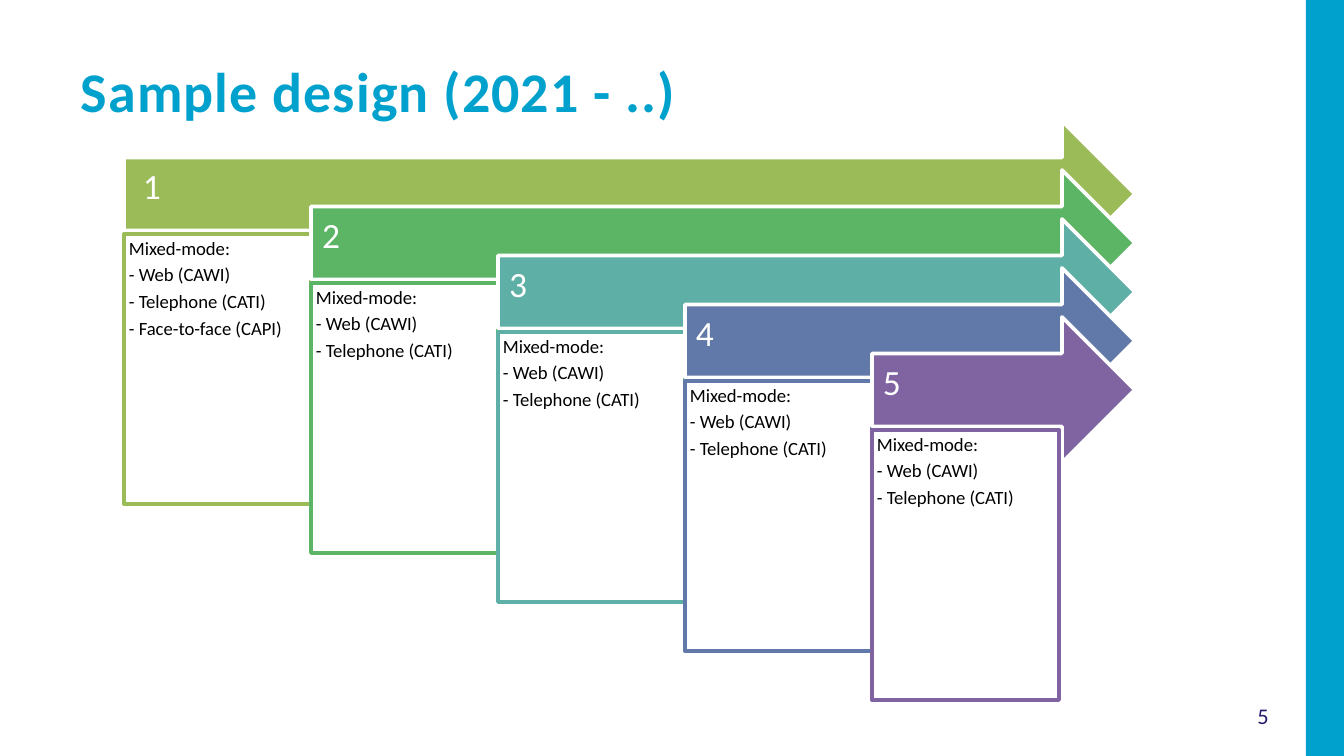
"""Builds a slide with five staggered survey waves and their interview modes."""
import pptx
import pptx.util
from pptx.dml.color import RGBColor
from pptx.enum.shapes import MSO_SHAPE
from pptx.enum.text import MSO_ANCHOR, PP_ALIGN

TITLE = "Sample design (2021 - ..)"
PAGE_NUMBER = "5"
MODES = ["Mixed-mode:", "- Web (CAWI)", "- Telephone (CATI)"]
WAVES = [
    ("1", "lime", MODES + ["- Face-to-face (CAPI)"], 19),
    ("2", "green", MODES, 11),
    ("3", "teal", MODES, 11),
    ("4", "blue", MODES, 11),
    ("5", "purple", MODES, 11),
]
COLOURS = {
    "white": "FFFFFF", "black": "000000", "cyan": "00A1CD", "navy": "271D6C",
    "lime": "9BBB59", "green": "5CB565", "teal": "5EAFA6",
    "blue": "6179A8", "purple": "8064A2",
}
FONT = "Calibri"
EMU_PER_PX = 914400 / 134.4
WIDTH, HEIGHT = 1344, 756
LEFT, ARROW_TOP, ARROW_RIGHT, ARROW_HEIGHT = 124, 121, 1135, 146
CARD_TOP, CARD_WIDTH, CARD_HEIGHT = 234, 187, 270
STEP_DOWN = 49


def px(length):
    return pptx.util.Emu(round(length * EMU_PER_PX))


def colour(name):
    return RGBColor.from_string(COLOURS[name])


def add_block(page, kind, place, fill, line=None):
    block = page.shapes.add_shape(kind, *map(px, place))
    block.shadow.inherit = False
    block.fill.solid()
    block.fill.fore_color.rgb = colour(fill)
    if line:
        block.line.color.rgb = colour(line)
        block.line.width = pptx.util.Pt(2)
    else:
        block.line.fill.background()
    return block


def write(shape, lines, size, ink, insets, anchor=MSO_ANCHOR.TOP,
          align=PP_ALIGN.LEFT, spacing=1.0, after=0, bold=False, tracking=0):
    frame = shape.text_frame
    frame.word_wrap = True
    frame.vertical_anchor = anchor
    (frame.margin_left, frame.margin_top,
     frame.margin_right, frame.margin_bottom) = map(px, insets)
    for index, line in enumerate(lines):
        para = frame.add_paragraph() if index else frame.paragraphs[0]
        para.alignment = align
        para.line_spacing = spacing
        para.space_after = pptx.util.Pt(after)
        span = para.add_run()
        span.text = line
        span.font.name = FONT
        span.font.size = pptx.util.Pt(size)
        span.font.bold = bold
        span.font.color.rgb = colour(ink)
        if tracking:
            span.font._element.set("spc", str(tracking))


def add_wave(page, index, wave):
    number, tint, modes, indent = wave
    left = LEFT + index * CARD_WIDTH
    drop = index * STEP_DOWN
    arrow = add_block(page, MSO_SHAPE.RIGHT_ARROW,
                      (left, ARROW_TOP + drop, ARROW_RIGHT - left, ARROW_HEIGHT),
                      tint, "white")
    write(arrow, [number], 19, "white", (indent, 11, 38, 23),
          MSO_ANCHOR.MIDDLE, spacing=0.9)
    card = add_block(page, MSO_SHAPE.RECTANGLE,
                     (left, CARD_TOP + drop, CARD_WIDTH, CARD_HEIGHT),
                     "white", tint)
    write(card, modes, 10, "black", (5, 5, 5, 5), spacing=0.9, after=3.5)


def main():
    deck = pptx.Presentation()
    deck.slide_width, deck.slide_height = px(WIDTH), px(HEIGHT)
    page = deck.slides.add_slide(deck.slide_layouts[6])
    add_block(page, MSO_SHAPE.RECTANGLE, (1306, 0, 38, HEIGHT), "cyan")
    number_box = page.shapes.add_textbox(*map(px, (1220, 692, 86, 47)))
    write(number_box, [PAGE_NUMBER], 12, "navy", (13, 7, 13, 7),
          MSO_ANCHOR.MIDDLE, PP_ALIGN.CENTER)
    title_box = page.shapes.add_textbox(*map(px, (68, 50, 1122, 74)))
    write(title_box, [TITLE], 30, "cyan", (13, 7, 13, 7), bold=True, tracking=60)
    for index, wave in enumerate(WAVES):
        add_wave(page, index, wave)
    deck.save("out.pptx")


if __name__ == "__main__":
    main()
